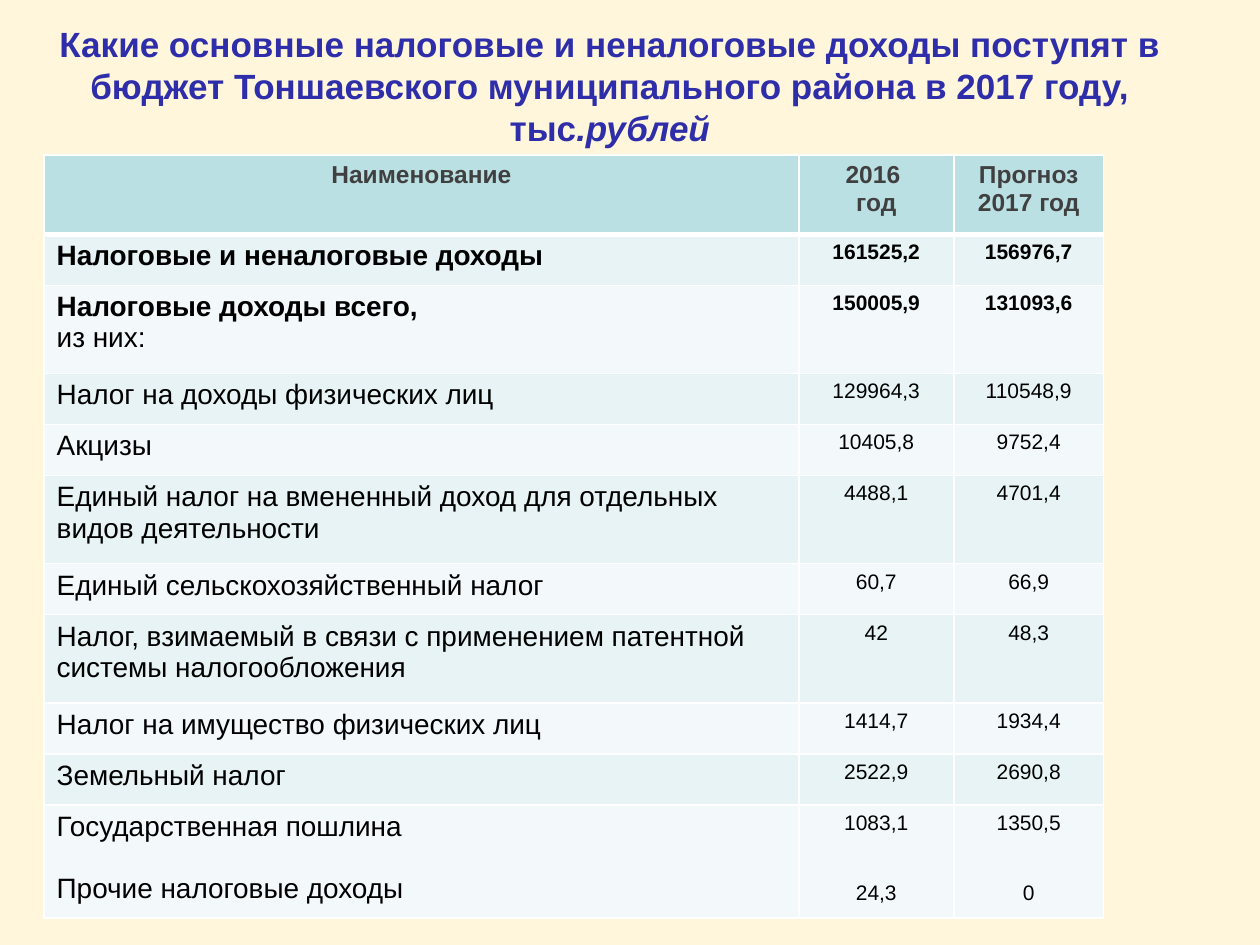
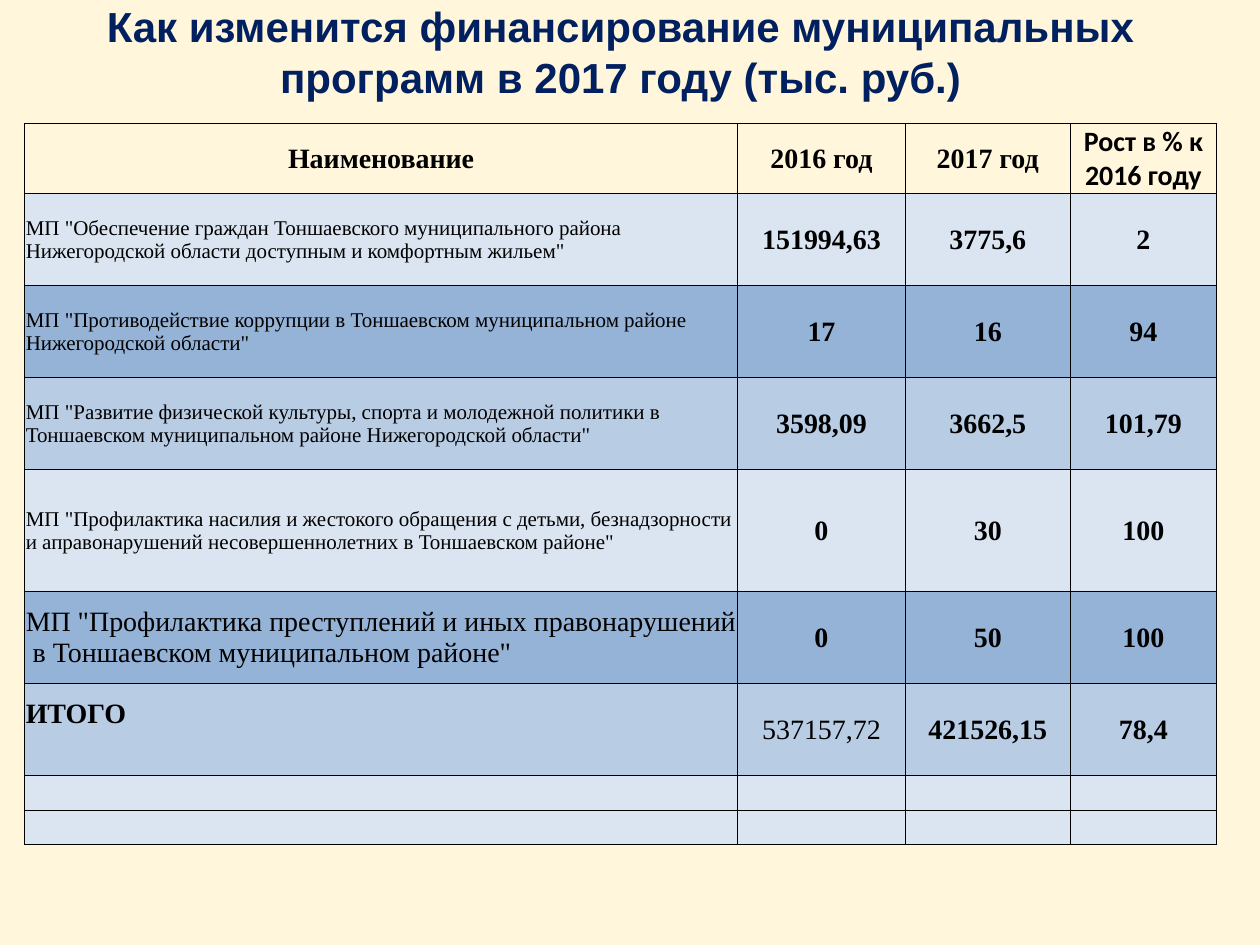
from dataclasses import dataclass, replace
from itertools import cycle

from lxml.etree import SubElement
from pptx import Presentation
from pptx.dml.color import RGBColor
from pptx.enum.text import MSO_ANCHOR as Anchor, MSO_AUTO_SIZE as AutoSize, PP_ALIGN as Align
from pptx.oxml import parse_xml
from pptx.oxml.ns import nsdecls, qn
from pptx.util import Inches, Pt

WIDTH, HEIGHT = Inches(10), Inches(7.5)
CREAM, WHITE, BLACK, GREY = "FFF6DB", "FFFFFF", "000000", "404040"
INDIGO, NAVY = "2E2EAA", "002060"
TEAL, MINT, MIST = "BBE0E3", "E7F3F4", "F3F9FA"
PALE, STEEL, SKY = "DBE5F1", "95B3D7", "B8CCE4"
SANS, SERIF, HEADER_SANS = "Arial", "Times New Roman", "Calibri"


@dataclass(frozen=True)
class Line:
    text: str
    size: float = 16
    bold: bool = False
    color: str = BLACK
    font: str = SANS
    align: Align = Align.LEFT
    gap: float = 0


@dataclass(frozen=True)
class Cell:
    lines: tuple[Line, ...] = ()
    anchor: Anchor = Anchor.TOP
    bottom: float = 0


@dataclass(frozen=True)
class Row:
    height: float
    fill: str | None
    cells: tuple[Cell, ...]
    rule: float


@dataclass(frozen=True)
class Grid:
    left: float
    top: float
    columns: tuple[float, ...]
    rows: tuple[Row, ...]
    border: str
    thickness: float
    margins: tuple[float, float, float, float]


@dataclass(frozen=True)
class Heading:
    left: float
    top: float
    width: float
    height: float
    size: float
    color: str
    inset: float
    paragraphs: tuple[tuple[tuple[str, bool], ...], ...]


def across(percent: float) -> int:
    return round(WIDTH * percent / 100)


def down(percent: float) -> int:
    return round(HEIGHT * percent / 100)


def rgb(code: str) -> RGBColor:
    return RGBColor.from_string(code)


def write(para, text: str, *, size: float, color: str, font: str = SANS,
          bold: bool = False, italic: bool = False, align: Align = Align.LEFT) -> None:
    para.alignment = align
    span = para.add_run()
    span.text = text
    span.font.name, span.font.size = font, Pt(size)
    span.font.bold, span.font.italic = bold, italic
    span.font.color.rgb = rgb(color)


def next_paragraph(frame, index: int):
    return frame.add_paragraph() if index else frame.paragraphs[0]


def draw_heading(page, heading: Heading) -> None:
    box = page.shapes.title
    box.left, box.width = across(heading.left), across(heading.width)
    box.top, box.height = down(heading.top), down(heading.height)
    frame = box.text_frame
    frame.word_wrap, frame.auto_size = True, AutoSize.NONE
    frame.vertical_anchor = Anchor.MIDDLE
    frame.margin_left = frame.margin_right = across(heading.inset)
    frame.margin_top = frame.margin_bottom = 0
    for index, spans in enumerate(heading.paragraphs):
        para = next_paragraph(frame, index)
        for text, italic in spans:
            write(para, text, size=heading.size, color=heading.color,
                  bold=True, italic=italic, align=Align.CENTER)


def draw_borders(cell, color: str, thickness: float, bottom: float) -> None:
    properties = cell._tc.get_or_add_tcPr()
    sides = {"lnL": thickness, "lnR": thickness, "lnT": thickness, "lnB": bottom}
    for index, (side, points) in enumerate(sides.items()):
        properties.insert(index, parse_xml(
            f'<a:{side} {nsdecls("a")} w="{Pt(points)}"><a:solidFill>'
            f'<a:srgbClr val="{color}"/></a:solidFill></a:{side}>'))


def fill_cell(target, cell: Cell, fill: str | None, margins: tuple[float, ...]) -> None:
    left, top, right, bottom = margins
    target.margin_left, target.margin_right = across(left), across(right)
    target.margin_top, target.margin_bottom = down(top), down(bottom + cell.bottom)
    target.vertical_anchor = cell.anchor
    if fill:
        target.fill.solid()
        target.fill.fore_color.rgb = rgb(fill)
    else:
        target.fill.background()
    for index, line in enumerate(cell.lines):
        para = next_paragraph(target.text_frame, index)
        para.space_before = Pt(line.gap)
        write(para, line.text, size=line.size, color=line.color, font=line.font,
              bold=line.bold, align=line.align)
    if not cell.lines:
        SubElement(target.text_frame.paragraphs[0]._p, qn("a:endParaRPr"), sz="1200")


def draw_grid(page, grid: Grid) -> None:
    height = sum(row.height for row in grid.rows)
    table = page.shapes.add_table(
        len(grid.rows), len(grid.columns), across(grid.left), down(grid.top),
        across(sum(grid.columns)), down(height)).table
    table.first_row = table.horz_banding = False
    for column, width in zip(table.columns, grid.columns):
        column.width = across(width)
    for index, row in enumerate(grid.rows):
        table.rows[index].height = down(row.height)
        upper = grid.rows[index - 1].rule if index else grid.thickness
        for place, cell in enumerate(row.cells):
            target = table.cell(index, place)
            fill_cell(target, cell, row.fill, grid.margins)
            draw_borders(target, grid.border, grid.thickness, row.rule)
            target._tc.tcPr.find(qn("a:lnT")).set("w", str(Pt(upper)))


def income_grid() -> Grid:
    head = Line("", 14, True, GREY, align=Align.CENTER)
    number = Line("", 12, align=Align.CENTER)
    short, tall, last = 5.4, 9.33, 12
    total = "Налоговые и неналоговые доходы"
    taxes = "Налоговые доходы всего,"
    records = (
        (short, (total,), ("161525,2",), ("156976,7",)),
        (tall, (taxes, "из них:"), ("150005,9",), ("131093,6",)),
        (short, ("Налог на доходы физических лиц",), ("129964,3",), ("110548,9",)),
        (short, ("Акцизы",), ("10405,8",), ("9752,4",)),
        (tall, ("Единый налог на вмененный доход для отдельных видов деятельности",),
         ("4488,1",), ("4701,4",)),
        (short, ("Единый сельскохозяйственный налог",), ("60,7",), ("66,9",)),
        (tall, ("Налог, взимаемый в связи с применением патентной системы налогообложения",),
         ("42",), ("48,3",)),
        (short, ("Налог на имущество физических лиц",), ("1414,7",), ("1934,4",)),
        (short, ("Земельный налог",), ("2522,9",), ("2690,8",)),
        (last, ("Государственная пошлина", "Прочие налоговые доходы"),
         ("1083,1", "24,3"), ("1350,5", "0")),
    )
    titles = (("Наименование",), ("2016 ", "год"), ("Прогноз 2017 год",))
    rows = [Row(8.4, TEAL, tuple(
        Cell(tuple(replace(head, text=text) for text in texts)) for texts in titles), 3)]
    for (height, *groups), fill in zip(records, cycle((MINT, MIST))):
        summary = groups[0][0] in (total, taxes)
        cells = []
        for style, gap, texts in zip((Line(""), number, number), (18, 27, 27), groups):
            cells.append(Cell(tuple(
                replace(style, text=text, bold=summary and index == 0,
                        gap=gap if index and height == last else 0)
                for index, text in enumerate(texts))))
        rows.append(Row(height, fill, tuple(cells), 1))
    return Grid(3.5, 16.4, (59.9, 12.3, 11.9), tuple(rows), WHITE, 1, (1, 0.67, 1, 0.67))


def programme_grid() -> Grid:
    bold = Line("", 16, True, font=SERIF, align=Align.CENTER)
    normal, tall, thin = 9.73, 12.93, 3.7
    records = (
        (normal, 'МП "Обеспечение граждан Тоншаевского муниципального района '
         'Нижегородской области доступным и комфортным жильем"', "151994,63", "3775,6", "2"),
        (normal, 'МП "Противодействие коррупции в Тоншаевском муниципальном районе '
         'Нижегородской области"', "17", "16", "94"),
        (normal, 'МП "Развитие физической культуры, спорта и молодежной политики в '
         'Тоншаевском муниципальном районе Нижегородской области"',
         "3598,09", "3662,5", "101,79"),
        (tall, 'МП "Профилактика насилия и жестокого обращения с детьми, безнадзорности '
         'и аправонарушений несовершеннолетних в Тоншаевском районе"', "0", "30", "100"),
        (normal, 'МП "Профилактика преступлений и иных правонарушений  в Тоншаевском '
         'муниципальном районе"', "0", "50", "100"),
    )
    titles = ("Наименование", "2016 год", "2017 год")
    head = [Cell((replace(bold, text=text),), Anchor.MIDDLE) for text in titles]
    growth = replace(bold, text="Рост в % к 2016 году", font=HEADER_SANS)
    rows = [Row(7.2, None, (*head, Cell((growth,), Anchor.BOTTOM)), 0.5)]
    for index, ((height, name, *values), fill) in enumerate(
            zip(records, cycle((PALE, STEEL, SKY)))):
        size = 16 if index == len(records) - 1 else 12
        label = Line(name, size, font=SERIF)
        lines = (label, *(replace(bold, text=value) for value in values))
        rows.append(Row(height, fill, tuple(
            Cell((line,), Anchor.MIDDLE) for line in lines), 0.5))
    total = (
        Cell((replace(bold, text="ИТОГО", align=Align.LEFT),), Anchor.MIDDLE, 3.3),
        Cell((replace(bold, text="537157,72", bold=False),), Anchor.MIDDLE),
        *(Cell((replace(bold, text=value),), Anchor.MIDDLE) for value in ("421526,15", "78,4")),
    )
    rows.append(Row(normal, SKY, total, 0.5))
    rows += [Row(thin, PALE, (Cell(),) * len(total), 0.5)] * 2
    return Grid(1.95, 13.07, (56.6, 13.3, 13.1, 11.6), tuple(rows), BLACK, 0.5,
                (0.1, 0.13, 0.1, 0))


def main() -> None:
    deck = Presentation()
    deck.slide_width, deck.slide_height = WIDTH, HEIGHT
    background = deck.slide_master.background.fill
    background.solid()
    background.fore_color.rgb = rgb(CREAM)
    income = Heading(-0.3, 1.6, 97.4, 14.8, 20, INDIGO, 1, (
        (("Какие основные налоговые и неналоговые доходы поступят в", False),),
        (("бюджет Тоншаевского муниципального района в 2017 году, тыс", False),
         (".рублей", True)),
    ))
    programmes = Heading(0.4, 0, 97.7, 10.8, 24, NAVY, 0.5, (
        (("Как изменится финансирование муниципальных программ в 2017 году (тыс. руб.)",
          False),),
    ))
    for heading, grid in ((income, income_grid()), (programmes, programme_grid())):
        page = deck.slides.add_slide(deck.slide_layouts[5])
        draw_heading(page, heading)
        draw_grid(page, grid)
    deck.save("out.pptx")


if __name__ == "__main__":
    main()
